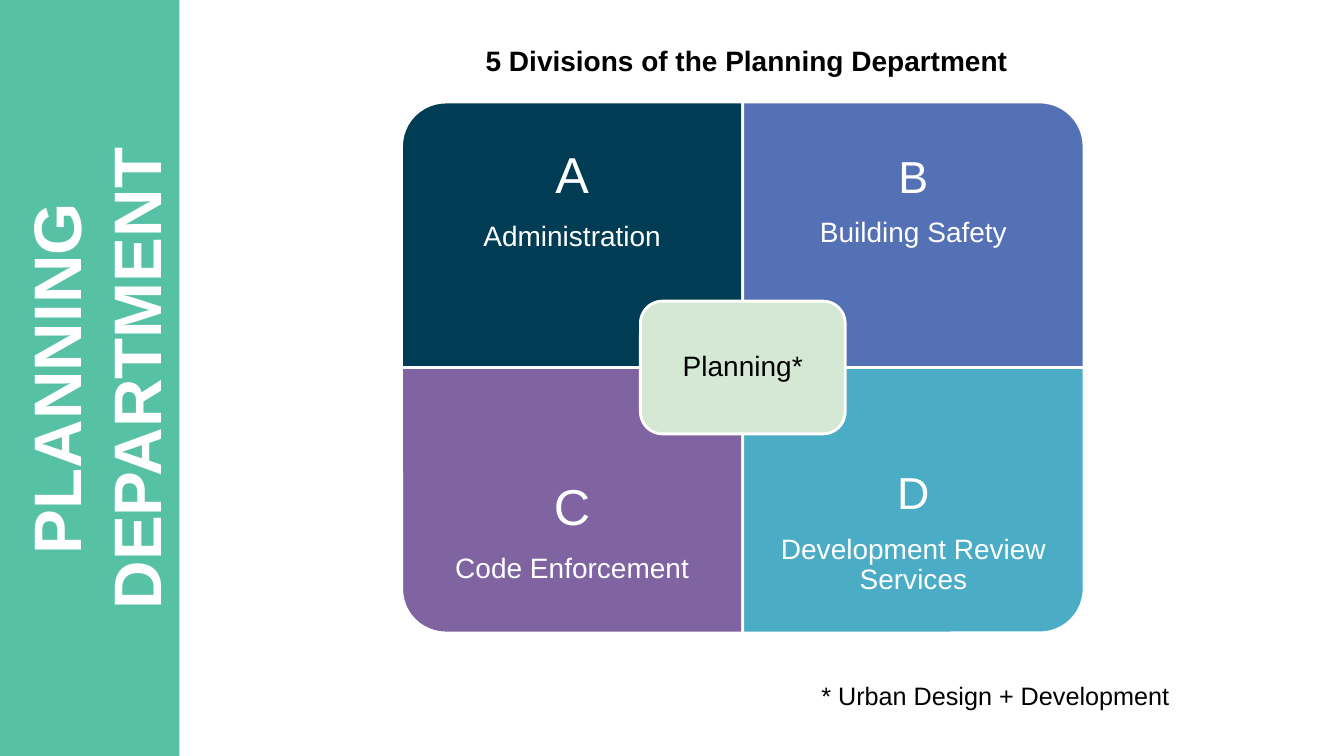
"""Build the slide showing the five divisions of the Planning Department."""
from pptx import Presentation
from pptx.dml.color import RGBColor
from pptx.enum.shapes import MSO_SHAPE
from pptx.enum.text import MSO_ANCHOR, PP_ALIGN
from pptx.util import Cm, Pt

TITLE = "PLANNING DEPARTMENT"
HEADING = "5 Divisions of the Planning Department"
FOOTNOTE = "* Urban Design + Development"
CENTER = "Planning*"
DIVISIONS = [
    {"letter": "A", "name": "Administration", "fill": "navy", "size": "large", "turn": 270},
    {"letter": "B", "name": "Building Safety", "fill": "blue", "size": "medium", "turn": 0},
    {"letter": "C", "name": "Code Enforcement", "fill": "purple", "size": "large", "turn": 180},
    {"letter": "D", "name": "Development Review Services", "fill": "aqua", "size": "medium", "turn": 90},
]

THEME = {
    "font": "Arial",
    "colors": {
        "white": "FFFFFF", "black": "000000", "green": "57C1A6", "mint": "D4E8D3",
        "navy": "003C54", "blue": "5571B6", "purple": "8064A2", "aqua": "4BACC6",
    },
    "sizes": {"title": 48, "large": 36, "medium": 32, "body": 20, "note": 18},
    "insets": {"large": 0.71, "medium": 0.64},
    "outline": 2,
}

PAGE_WIDTH, PAGE_HEIGHT = 33.87, 19.05
BAND_WIDTH = 4.52
GRID_LEFT, GRID_TOP = 10.12, 2.57
CELL_WIDTH, CELL_HEIGHT = 8.6, 6.69
LABEL_HEIGHT = CELL_HEIGHT * 0.75
CENTER_WIDTH, CENTER_HEIGHT = CELL_WIDTH * 0.6, CELL_HEIGHT * 0.5


def color(name):
    return RGBColor.from_string(THEME["colors"][name])


def apply(target, values):
    for name, value in values.items():
        setattr(target, name, value)


def add_block(page, kind, area, fill, outlined=True, turn=0):
    shape = page.shapes.add_shape(kind, *map(Cm, area))
    shape.shadow.inherit = False
    shape.rotation = turn
    shape.fill.solid()
    shape.fill.fore_color.rgb = color(fill)
    if outlined:
        shape.line.color.rgb = color("white")
        shape.line.width = Pt(THEME["outline"])
    else:
        shape.line.fill.background()
    return shape


def write(box, lines, ink, bold=False, wrap=True, inset=(0.25, 0.13), centered=True, spacing=None):
    frame = box.text_frame
    across, down = map(Cm, inset)
    apply(frame, {
        "word_wrap": wrap,
        "vertical_anchor": MSO_ANCHOR.MIDDLE if centered else MSO_ANCHOR.TOP,
        "margin_left": across, "margin_right": across,
        "margin_top": down, "margin_bottom": down,
    })
    for index, (text, size) in enumerate(lines):
        para = frame.add_paragraph() if index else frame.paragraphs[0]
        points = THEME["sizes"][size]
        para.alignment = PP_ALIGN.CENTER if centered else PP_ALIGN.LEFT
        if spacing:
            para.line_spacing = spacing
        if index < len(lines) - 1:
            para.space_after = Pt(points * 0.35)
        span = para.add_run()
        span.text = text
        apply(span.font, {"name": THEME["font"], "size": Pt(points), "bold": bold})
        span.font.color.rgb = color(ink)


def add_division(page, index, division):
    row, column = divmod(index, 2)
    left, top = GRID_LEFT + column * CELL_WIDTH, GRID_TOP + row * CELL_HEIGHT
    turn = division["turn"]
    width, height = (CELL_HEIGHT, CELL_WIDTH) if turn % 180 else (CELL_WIDTH, CELL_HEIGHT)
    area = (left + (CELL_WIDTH - width) / 2, top + (CELL_HEIGHT - height) / 2, width, height)
    add_block(page, MSO_SHAPE.ROUND_1_RECTANGLE, area, division["fill"], turn=turn)
    label_top = top + row * (CELL_HEIGHT - LABEL_HEIGHT)
    box = page.shapes.add_textbox(*map(Cm, (left, label_top, CELL_WIDTH, LABEL_HEIGHT)))
    inset = THEME["insets"][division["size"]]
    lines = [(division["letter"], division["size"]), (division["name"], "body")]
    write(box, lines, "white", inset=(inset, inset), spacing=0.9)


def main():
    deck = Presentation()
    deck.slide_width, deck.slide_height = Cm(PAGE_WIDTH), Cm(PAGE_HEIGHT)
    page = deck.slides.add_slide(deck.slide_layouts[6])

    add_block(page, MSO_SHAPE.RECTANGLE, (0, 0, BAND_WIDTH, PAGE_HEIGHT), "green", outlined=False)
    title = page.shapes.add_textbox(*map(Cm, (-6.76, 7.42, 18.29, 4.24)))
    title.rotation = 270
    write(title, [(TITLE, "title")], "white", bold=True)

    for index, division in enumerate(DIVISIONS):
        add_division(page, index, division)

    center_area = (
        GRID_LEFT + CELL_WIDTH - CENTER_WIDTH / 2,
        GRID_TOP + CELL_HEIGHT - CENTER_HEIGHT / 2,
        CENTER_WIDTH, CENTER_HEIGHT,
    )
    center = add_block(page, MSO_SHAPE.ROUNDED_RECTANGLE, center_area, "mint")
    write(center, [(CENTER, "body")], "black", inset=(0.2, 0.2), spacing=0.9)

    captions = [
        (FOOTNOTE, "note", False, (20.45, 17.02, 9.37, 1.02)),
        (HEADING, "body", True, (11.99, 0.97, 13.77, 1.12)),
    ]
    for text, size, bold, area in captions:
        box = page.shapes.add_textbox(*map(Cm, area))
        write(box, [(text, size)], "black", bold=bold, wrap=False, centered=False)

    deck.save("out.pptx")


if __name__ == "__main__":
    main()
